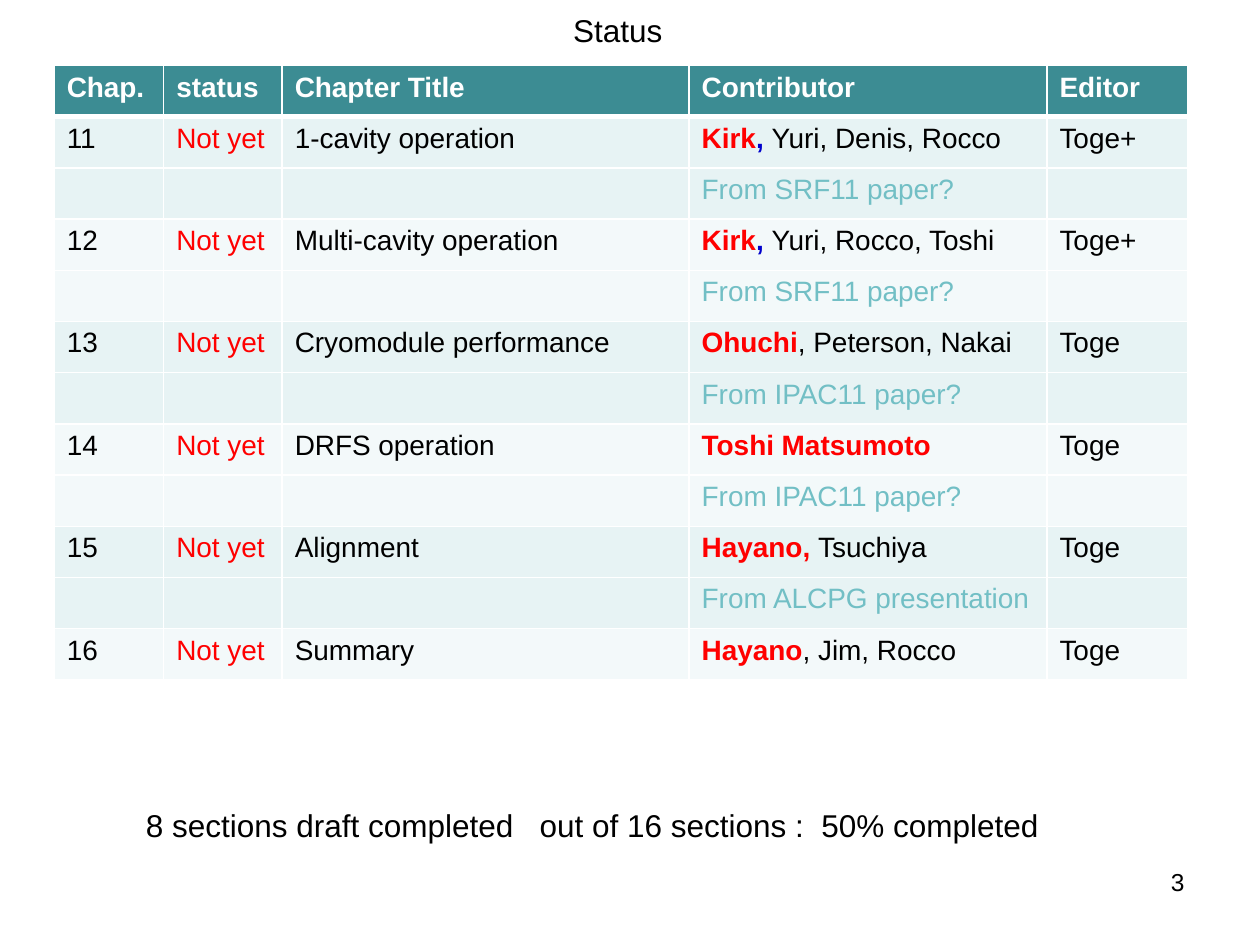
from lxml import etree
from pptx import Presentation
from pptx.dml.color import RGBColor
from pptx.enum import text as t
from pptx.oxml.ns import qn
from pptx.util import Inches, Pt

BLACK, WHITE, RED, BLUE = "000000", "FFFFFF", "FF0000", "0000CC"
TEAL, NOTE_TEAL = "3C8C93", "72BFC5"
BANDS = ("E7F3F4", "F3F9FA")

HEADINGS = ("Chap.", "status", "Chapter Title", "Contributor", "Editor")
COLUMN_WIDTHS = (0.87, 0.94, 3.23, 2.84, 1.12)

# Chapter, title, lead contributor, separator in blue, others, editor, source note
CHAPTERS = (
    ("11", "1-cavity operation", "Kirk", ", ", "Yuri, Denis, Rocco", "Toge+", "From SRF11 paper?"),
    ("12", "Multi-cavity operation", "Kirk", ", ", "Yuri, Rocco, Toshi", "Toge+", "From SRF11 paper?"),
    ("13", "Cryomodule performance", "Ohuchi", "", ", Peterson, Nakai", "Toge", "From IPAC11 paper?"),
    ("14", "DRFS operation", "Toshi Matsumoto", "", "", "Toge", "From IPAC11 paper?"),
    ("15", "Alignment", "Hayano, ", "", "Tsuchiya", "Toge", "From ALCPG presentation"),
    ("16", "Summary", "Hayano", "", ", Jim, Rocco", "Toge", ""),
)


def rgb(value):
    return RGBColor.from_string(value)


def add_text(paragraph, words, size=16, color=BLACK, bold=False):
    if not words:
        return
    run = paragraph.add_run()
    run.text = words
    run.font.name = "Arial"
    run.font.size = Pt(size)
    run.font.bold = bold
    run.font.color.rgb = rgb(color)


def add_label(slide, box, words, size=18, align=t.PP_ALIGN.LEFT, wrap=False):
    label = slide.shapes.add_textbox(*map(Inches, box))
    frame = label.text_frame
    frame.word_wrap = wrap
    if not wrap:
        frame.auto_size = t.MSO_AUTO_SIZE.SHAPE_TO_FIT_TEXT
    frame.paragraphs[0].alignment = align
    add_text(frame.paragraphs[0], words, size=size)


def style_cell(cell, fill, top=1, bottom=1):
    cell.fill.solid()
    cell.fill.fore_color.rgb = rgb(fill)
    properties = cell._tc.get_or_add_tcPr()
    # Borders come before the fill in the cell properties
    edges = (("a:lnL", 1), ("a:lnR", 1), ("a:lnT", top), ("a:lnB", bottom))
    for place, (edge, width) in enumerate(edges):
        line = etree.Element(qn(edge), w=str(Pt(width)))
        solid = etree.SubElement(line, qn("a:solidFill"))
        etree.SubElement(solid, qn("a:srgbClr"), val=WHITE)
        properties.insert(place, line)


def table_rows():
    """Yield each row's fill and its five cells, a cell being (words, format) pairs."""
    yield TEAL, [[(name, dict(color=WHITE, bold=True))] for name in HEADINGS]
    for index, (number, title, lead, comma, others, editor, note) in enumerate(CHAPTERS):
        band = BANDS[index % 2]
        contributors = [(lead, dict(color=RED, bold=True)),
                        (comma, dict(color=BLUE, bold=True)), (others, {})]
        yield band, [[(number, {})], [("Not yet", dict(color=RED))],
                     [(title, {})], contributors, [(editor, {})]]
        if note:
            yield band, [[], [], [], [(note, dict(color=NOTE_TEAL))], []]


def add_status_table(slide, box):
    rows = list(table_rows())
    frame = slide.shapes.add_table(len(rows), len(HEADINGS), *map(Inches, box))
    table = frame.table
    for column, width in zip(table.columns, COLUMN_WIDTHS):
        column.width = Inches(width)
    for r, (fill, cells) in enumerate(rows):
        for c, pieces in enumerate(cells):
            cell = table.cell(r, c)
            # A heavier rule parts the heading from the body
            style_cell(cell, fill, top=3 if r == 1 else 1, bottom=3 if r == 0 else 1)
            paragraph = cell.text_frame.paragraphs[0]
            paragraph.font.size = Pt(16)
            for words, style in pieces:
                add_text(paragraph, words, **style)


def main():
    deck = Presentation()
    deck.slide_width, deck.slide_height = Inches(10), Inches(7.5)
    slide = deck.slides.add_slide(deck.slide_layouts[6])

    # Chapter status
    add_status_table(slide, (0.43, 0.52, 9, 4.88))
    # Page number
    add_label(slide, (7.17, 6.83, 2.33, 0.52), "3", size=14,
              align=t.PP_ALIGN.RIGHT, wrap=True)
    # Title and progress summary
    add_label(slide, (4.45, 0.04, 0.92, 0.4), "Status")
    add_label(slide, (1.06, 6.35, 7.36, 0.4),
              "8 sections draft completed   out of 16 sections :  50% completed")

    deck.save("out.pptx")


if __name__ == "__main__":
    main()
